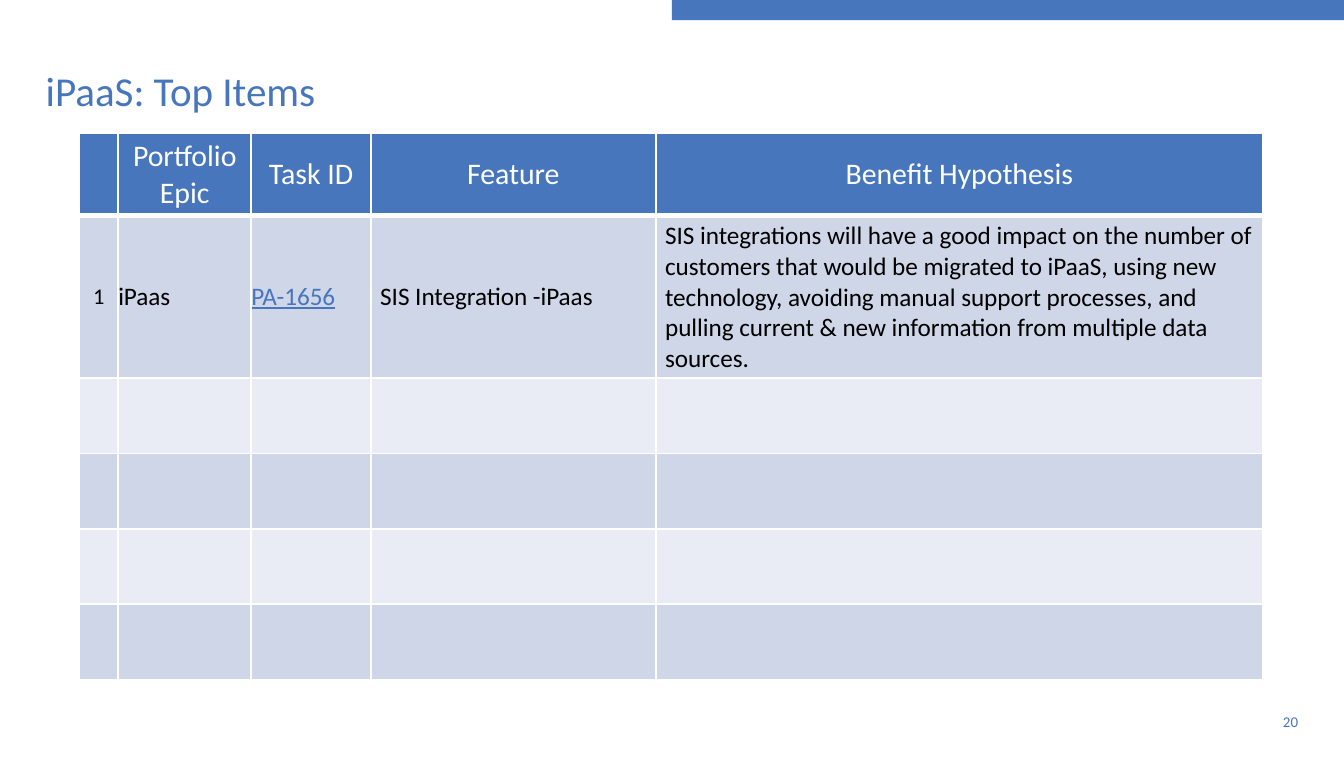
from lxml import etree
from pptx import Presentation
from pptx.dml.color import RGBColor
from pptx.enum.shapes import MSO_SHAPE
from pptx.enum.text import MSO_ANCHOR as ANCHOR, PP_ALIGN as ALIGN
from pptx.oxml.ns import qn
from pptx.util import Inches, Pt

BLUE, WHITE, BLACK = "4776BD", "FFFFFF", "000000"
BANDS = ("CFD6E8", "E9ECF4")


def rgb(value):
    return RGBColor.from_string(value)


class SlideBuilder:
    font = "Calibri"

    def __init__(self, slide):
        self.slide = slide

    def style(self, p, size, color, align=ALIGN.LEFT, underline=None):
        p.alignment = align
        for r in p.runs:
            r.font.name, r.font.size = self.font, Pt(size)
            r.font.color.rgb = rgb(color)
            r.font.underline = underline

    def frame(self, tf, anchor, wrap):
        tf.margin_left = tf.margin_right = tf.margin_top = tf.margin_bottom = 0
        tf.vertical_anchor, tf.word_wrap = anchor, wrap

    def title(self, text, *box):
        sp = self.slide.shapes.title
        sp.left, sp.top, sp.width, sp.height = map(Inches, box)
        tf = sp.text_frame
        tf.text = text
        self.frame(tf, ANCHOR.BOTTOM, True)
        tf.paragraphs[0].line_spacing = 0.9
        self.style(tf.paragraphs[0], 22, BLUE)

    def bar(self, *box):
        sp = self.slide.shapes.add_shape(MSO_SHAPE.RECTANGLE, *map(Inches, box))
        sp.shadow.inherit = False
        sp.fill.solid()
        sp.fill.fore_color.rgb = rgb(BLUE)
        sp.line.fill.background()

    def page_number(self, text, *box):
        tf = self.slide.shapes.add_textbox(*map(Inches, box)).text_frame
        tf.text = text
        self.frame(tf, ANCHOR.MIDDLE, False)
        self.style(tf.paragraphs[0], 8, BLUE, ALIGN.RIGHT)

    def table(self, left, top, widths, heights):
        box = map(Inches, (left, top, sum(widths), sum(heights)))
        table = self.slide.shapes.add_table(len(heights), len(widths), *box).table
        for column, width in zip(table.columns, widths):
            column.width = Inches(width)
        for i, (row, height) in enumerate(zip(table.rows, heights)):
            row.height = Inches(height)
            for cell in row.cells:
                self.borders(cell, top=3 if i == 1 else 1, bottom=3 if i == 0 else 1)
                cell.fill.solid()
                cell.fill.fore_color.rgb = rgb(BANDS[(i - 1) % 2] if i else BLUE)
        return table

    def borders(self, cell, top, bottom):
        """Draw white borders; call before the fill, which must follow them in the XML."""
        tcPr = cell._tc.get_or_add_tcPr()
        for tag, width in (("lnL", 1), ("lnR", 1), ("lnT", top), ("lnB", bottom)):
            ln = etree.SubElement(tcPr, qn(f"a:{tag}"), w=str(Pt(width)))
            fill = etree.SubElement(ln, qn("a:solidFill"))
            etree.SubElement(fill, qn("a:srgbClr"), val=WHITE)

    def cell_text(self, cell, text, size, color, align=ALIGN.LEFT,
                  underline=None, margins=(0.07, 0.04)):
        cell.text = text
        cell.vertical_anchor = ANCHOR.MIDDLE
        cell.margin_left = cell.margin_right = Inches(margins[0])
        cell.margin_top = cell.margin_bottom = Inches(margins[1])
        self.style(cell.text_frame.paragraphs[0], size, color, align, underline)


def main():
    prs = Presentation()
    prs.slide_width, prs.slide_height = Inches(10), Inches(5.63)
    b = SlideBuilder(prs.slides.add_slide(prs.slide_layouts[5]))

    b.page_number("20", 8.66, 5.22, 1, 0.3)
    b.bar(5, 0, 5, 0.15)
    b.title("iPaaS: Top Items", 0.34, 0.23, 9.32, 0.63)

    table = b.table(0.59, 0.99, [0.29, 0.99, 0.89, 2.12, 4.52],
                    [0.59, 1.21] + [0.56] * 4)
    headers = ["Portfolio Epic", "Task ID", "Feature", "Benefit Hypothesis"]
    for col, header in enumerate(headers, 1):
        b.cell_text(table.cell(0, col), header, 16, WHITE, ALIGN.CENTER)

    number, epic, task, feature, benefit = table.rows[1].cells
    b.cell_text(number, "1", 12, BLACK, ALIGN.CENTER)
    b.cell_text(epic, "iPaas", 13.5, BLACK, margins=(0, 0))
    b.cell_text(task, "PA-1656", 13.5, BLUE, underline=True, margins=(0, 0))
    b.cell_text(feature, "SIS Integration -iPaas", 13.5, BLACK)
    b.cell_text(benefit, "SIS integrations will have a good impact on the number of "
                "customers that would be migrated to iPaaS, using new technology, "
                "avoiding manual support processes, and pulling current & new "
                "information from multiple data sources.", 13.5, BLACK)

    prs.save("out.pptx")


if __name__ == "__main__":
    main()
